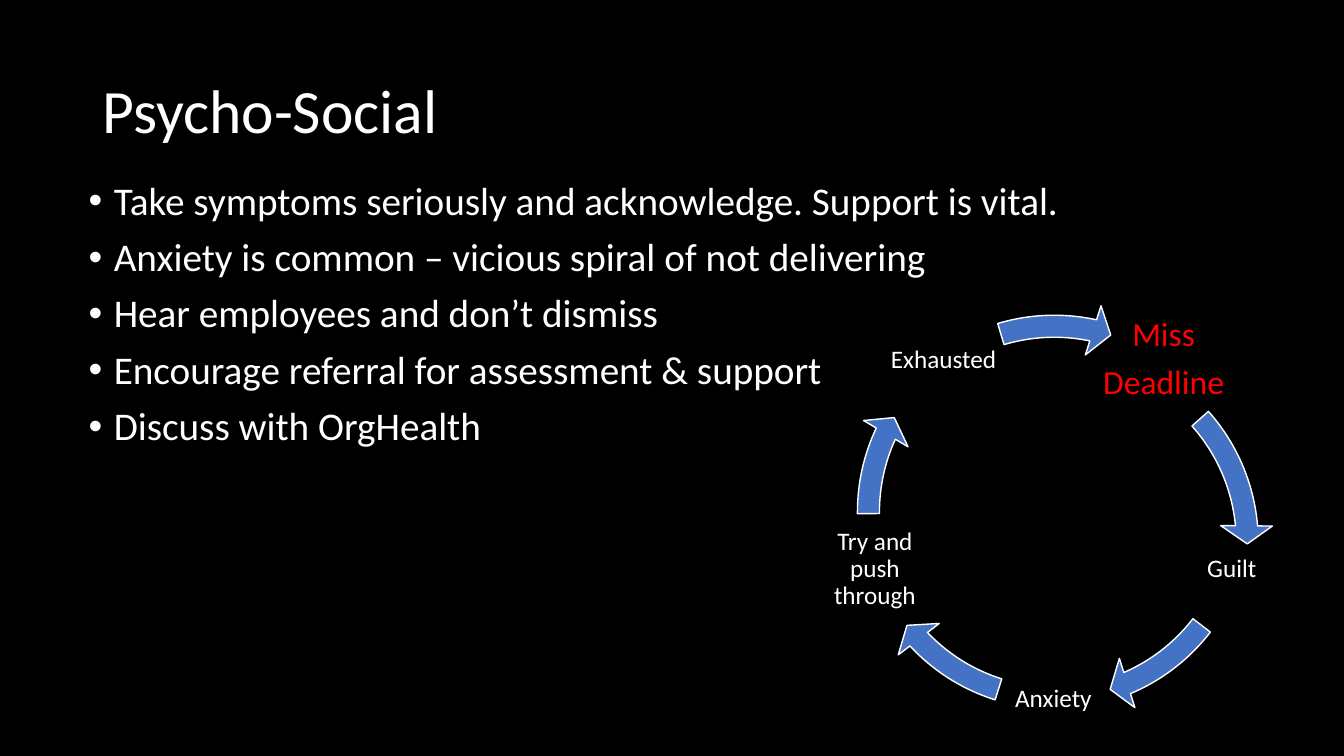
from pptx import Presentation
from pptx.dml.color import RGBColor
from pptx.enum.shapes import MSO_SHAPE
from pptx.enum.text import MSO_ANCHOR, PP_ALIGN
from pptx.util import Pt
from lxml.etree import SubElement
from pptx.oxml.ns import qn

# Content
TITLE = "Psycho-Social"
ADVICE = [
    "Take symptoms seriously and acknowledge. Support is vital.",
    "Anxiety is common – vicious spiral of not delivering",
    "Hear employees and don’t dismiss",
    "Encourage referral for assessment & support",
    "Discuss with OrgHealth",
]
# Cycle step: lines, label left and top, arrow end and start angles
CYCLE = [
    (["Miss", "Deadline"], (763.9, 237.6), (212.94, 190.98)),
    (["Guilt"], (839.5, 366.5), (40.15, 22.53)),
    (["Anxiety"], (712.1, 459.4), (82.11, 64.49)),
    (["Try and push through"], (584.6, 366.5), (122.98, 107.71)),
    (["Exhausted"], (633.6, 216.7), (169.25, 151.98)),
]

THEME = {
    "font": "Calibri",
    "back": RGBColor(0, 0, 0),
    "text": RGBColor(255, 255, 255),
    "alert": RGBColor(255, 0, 0),
    "arrow": RGBColor(0x44, 0x72, 0xC4),
    "title": 44, "body": 28, "trigger": 24, "step": 18,
}
LABEL = (80.64, 80.64)
TRIGGER_LABEL = (134.6, 38.9)
RING = (601.9, 214.6)
TRIGGER_RING = (607, 236.2)
RING_SIZE = 302.4
ARROW_WIDTH, HEAD_ANGLE, HEAD_WIDTH = 0.052, 3.358, 0.061


def add_text(s, lines, box, size, color=THEME["text"], anchor=MSO_ANCHOR.MIDDLE,
             align=PP_ALIGN.LEFT, inset=None, before=0, after=0, bullet=None):
    tf = s.shapes.add_textbox(*map(Pt, box)).text_frame
    tf.word_wrap = True
    tf.vertical_anchor = anchor
    if inset is not None:
        tf.margin_left = tf.margin_right = tf.margin_top = tf.margin_bottom = Pt(inset)
    for i, line in enumerate(lines):
        p = tf.paragraphs[0] if i == 0 else tf.add_paragraph()
        p.alignment, p.line_spacing = align, 0.9
        p.space_before, p.space_after = Pt(before), Pt(after)
        r = p.add_run()
        r.text = line
        r.font.name, r.font.size = THEME["font"], Pt(size)
        r.font.color.rgb = color
        if bullet:
            pPr = p._p.get_or_add_pPr()
            pPr.set("marL", str(Pt(18)))
            pPr.set("indent", str(-Pt(18)))
            SubElement(pPr, qn("a:buFont")).set("typeface", "Arial")
            SubElement(pPr, qn("a:buChar")).set("char", bullet)


def add_arrow(s, corner, end, start):
    sp = s.shapes.add_shape(MSO_SHAPE.CIRCULAR_ARROW, *map(Pt, corner),
                            Pt(RING_SIZE), Pt(RING_SIZE))
    sp.shadow.inherit = False
    for i, value in enumerate((ARROW_WIDTH, HEAD_ANGLE, end, start, HEAD_WIDTH)):
        sp.adjustments[i] = value
    sp.fill.solid()
    sp.fill.fore_color.rgb = THEME["arrow"]
    sp.line.color.rgb = THEME["text"]
    sp.line.width = Pt(1)


def main():
    prs = Presentation()
    prs.slide_width, prs.slide_height = Pt(960), Pt(540)
    s = prs.slides.add_slide(prs.slide_layouts[6])
    s.background.fill.solid()
    s.background.fill.fore_color.rgb = THEME["back"]

    # Title and advice
    add_text(s, [TITLE], (66, 28.8, 828, 104.4), THEME["title"])
    add_text(s, ADVICE, (56.2, 126, 828, 342.7), THEME["body"],
             anchor=MSO_ANCHOR.TOP, before=10, bullet="•")

    # Vicious cycle: each label is followed by its arrow
    for i, (lines, corner, angles) in enumerate(CYCLE):
        trigger = i == 0
        size = THEME["trigger" if trigger else "step"]
        add_text(s, lines, corner + (TRIGGER_LABEL if trigger else LABEL), size,
                 color=THEME["alert" if trigger else "text"],
                 align=PP_ALIGN.CENTER, inset=2.2, after=0.35 * size)
        add_arrow(s, TRIGGER_RING if trigger else RING, *angles)

    prs.save("out.pptx")


if __name__ == "__main__":
    main()
